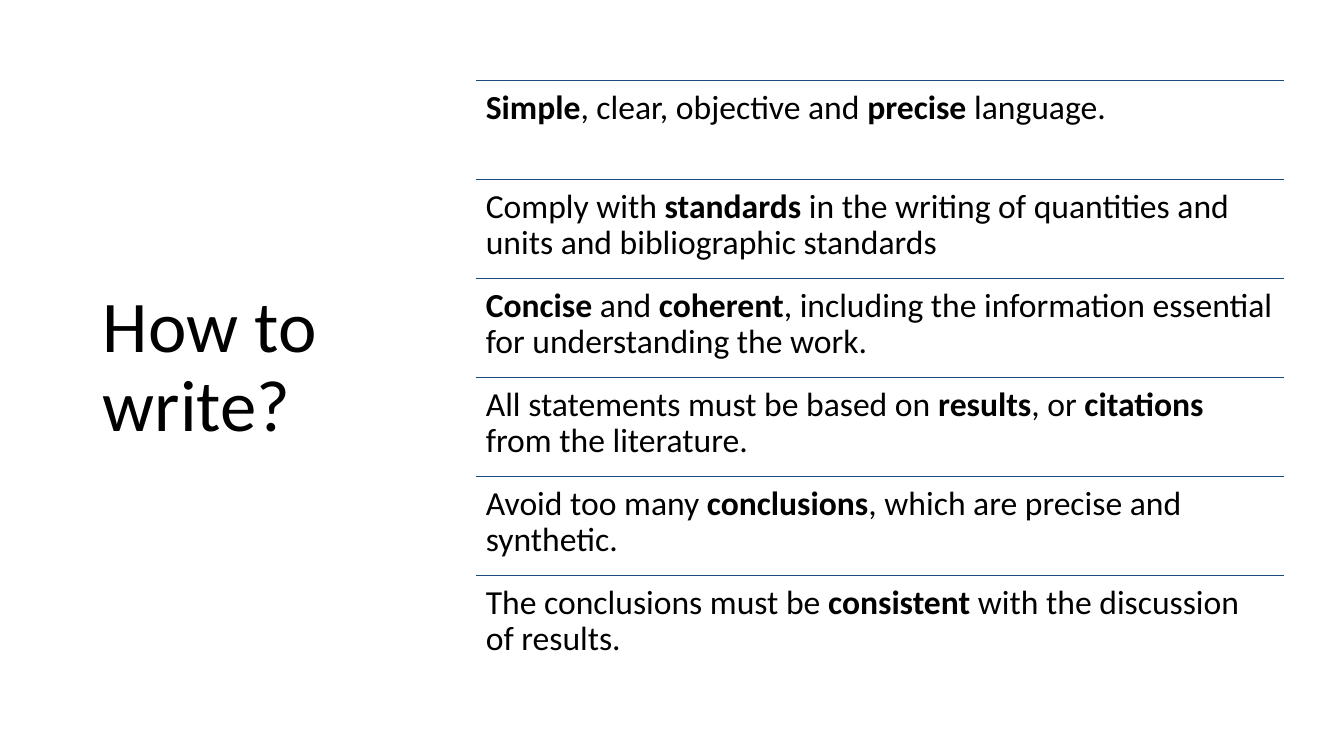
from lxml.etree import SubElement
from pptx import Presentation
from pptx.dml.color import RGBColor
from pptx.enum.shapes import MSO_CONNECTOR
from pptx.enum.text import MSO_ANCHOR
from pptx.oxml.ns import qn
from pptx.util import Inches, Pt

FONT = "Calibri"
BLACK = "000000"
RULE_BLUE = "1D497D"

LIST_LEFT, LIST_TOP, LIST_WIDTH = 4.72, 0.8, 8.02
ROW_HEIGHT = 0.982

# Asterisks enclose the bold words.
GUIDELINES = [
    "*Simple*, clear, objective and *precise* language.",
    "Comply with *standards* in the writing of quantities and units and bibliographic standards",
    "*Concise* and *coherent*, including the information essential for understanding the work.",
    "All statements must be based on *results*, or *citations* from the literature.",
    "Avoid too many *conclusions*, which are precise and synthetic.",
    "The conclusions must be *consistent* with the discussion of results.",
]


def rgb(color):
    return RGBColor.from_string(color)


def add_text(s, text, left, top, width, height, size, inset_y, anchor):
    """Add a text box; parts of the text between asterisks are bold."""
    box = s.shapes.add_textbox(Inches(left), Inches(top), Inches(width), Inches(height))
    tf = box.text_frame
    tf.word_wrap = True
    tf.vertical_anchor = anchor
    tf.margin_left = tf.margin_right = Inches(0.1)
    tf.margin_top = tf.margin_bottom = Inches(inset_y)
    p = tf.paragraphs[0]
    p.line_spacing = 0.9
    for i, part in enumerate(text.split("*")):
        if part:
            r = p.add_run()
            r.text = part
            r.font.name = FONT
            r.font.size = Pt(size)
            r.font.bold = i % 2 == 1
            r.font.color.rgb = rgb(BLACK)


def add_rule(s, left, top, width):
    line = s.shapes.add_connector(
        MSO_CONNECTOR.STRAIGHT, Inches(left), Inches(top), Inches(left + width), Inches(top))
    line.line.color.rgb = rgb(RULE_BLUE)
    line.line.width = Pt(1)
    SubElement(line._element.spPr, qn("a:effectLst"))


def add_guidelines(s):
    for i, text in enumerate(GUIDELINES):
        top = LIST_TOP + i * ROW_HEIGHT
        add_rule(s, LIST_LEFT, top, LIST_WIDTH)
        add_text(s, text, LIST_LEFT, top, LIST_WIDTH, ROW_HEIGHT, 24, 0.1, MSO_ANCHOR.TOP)


def main():
    prs = Presentation()
    prs.slide_width = Inches(13.33)
    prs.slide_height = Inches(7.5)
    s = prs.slides.add_slide(prs.slide_layouts[6])
    add_text(s, "How to write?", 0.92, 0.61, 3.69, 6.09, 52, 0.05, MSO_ANCHOR.MIDDLE)
    add_guidelines(s)
    prs.save("out.pptx")


if __name__ == "__main__":
    main()
